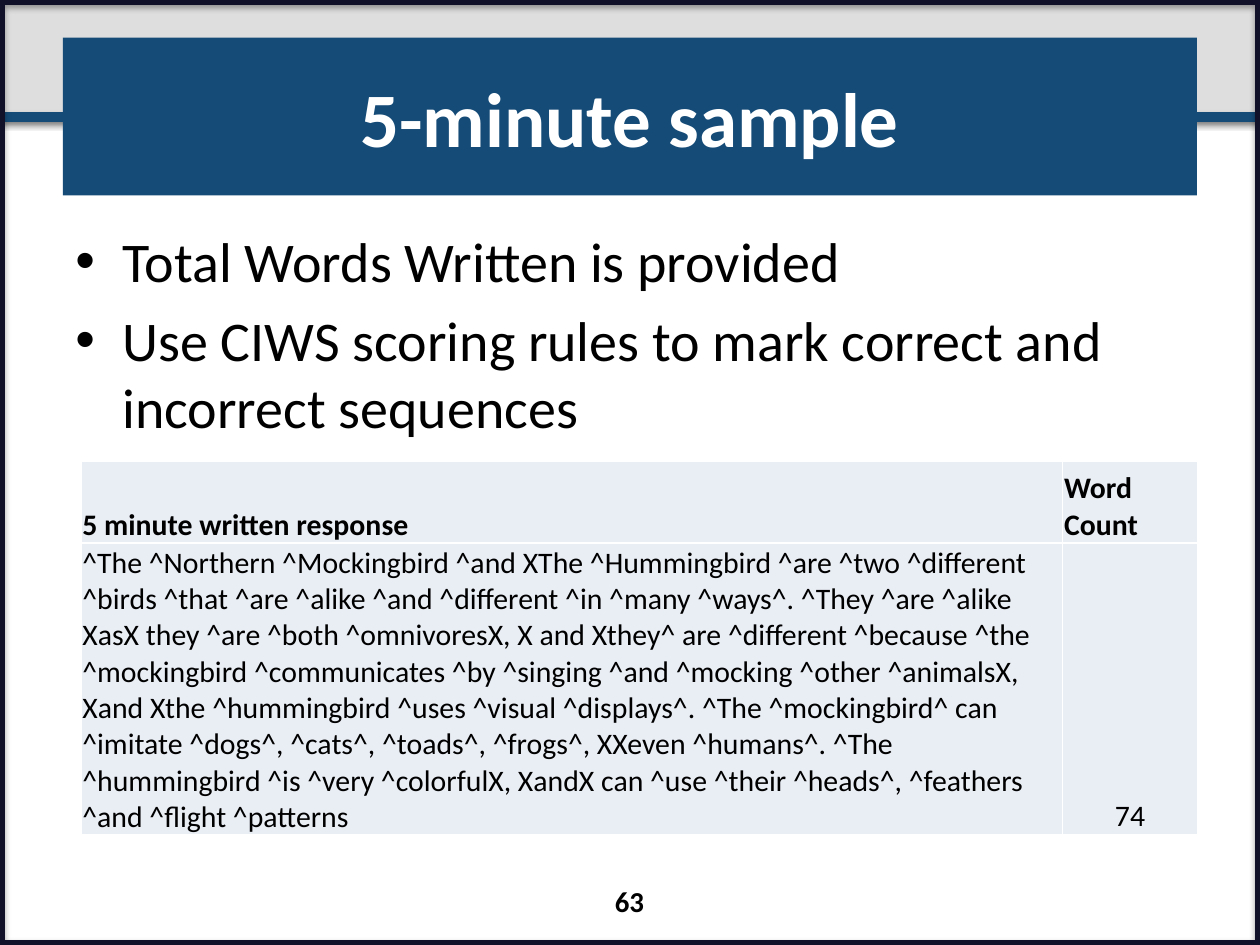
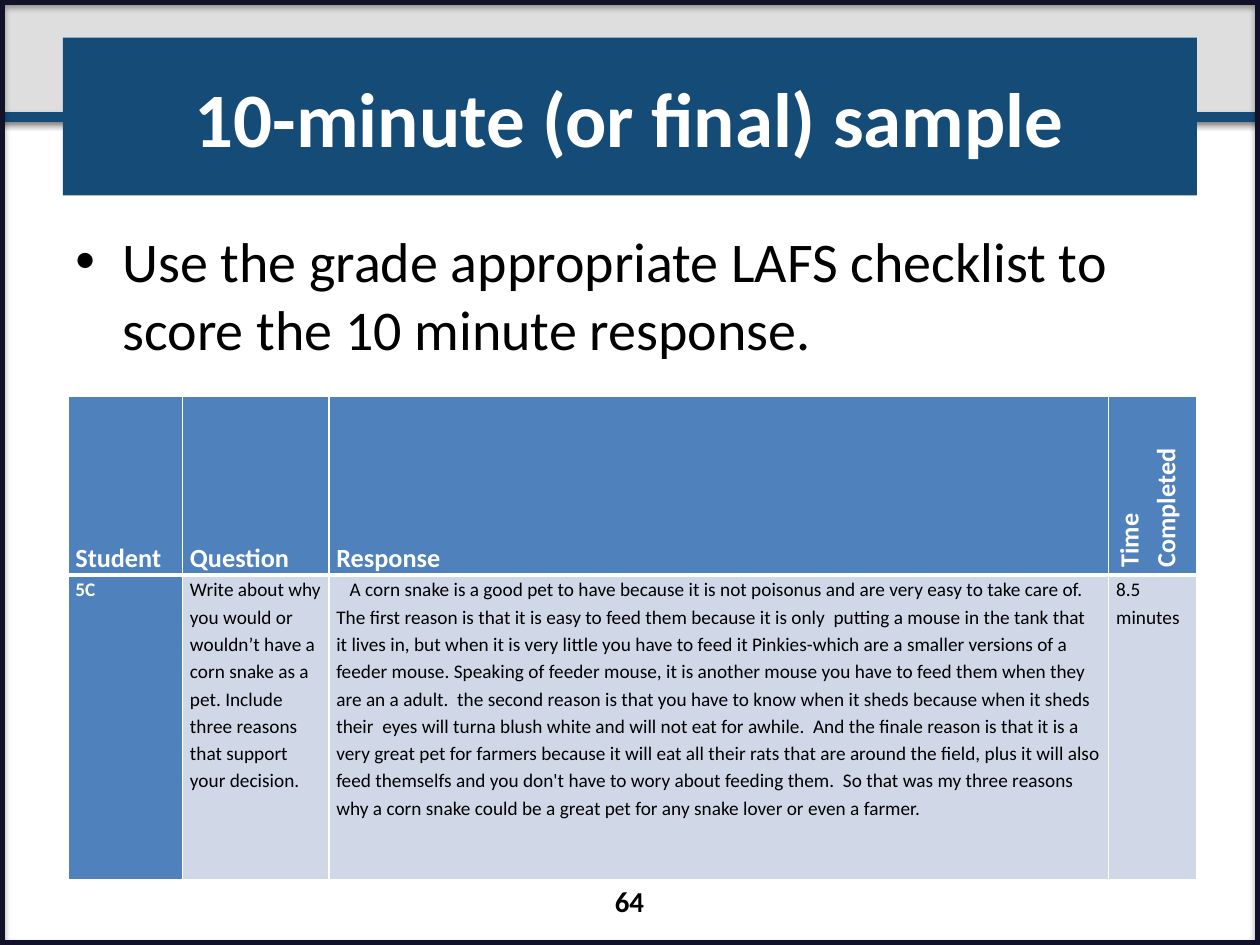
from lxml import etree
from pptx import Presentation
from pptx.dml.color import RGBColor
from pptx.enum.shapes import MSO_CONNECTOR as Link, MSO_SHAPE as Shape
from pptx.enum.text import MSO_ANCHOR as Anchor, PP_ALIGN as Align
from pptx.oxml import parse_xml
from pptx.oxml.ns import nsdecls, qn
from pptx.util import Cm, Pt

# Shared look
WIDE, HIGH = 25.4, 19.05
EDGE, SPAN = 1.27, 22.86
BAND = 2.36
NAVY, GREY, DARK = "154B77", "DDDEDD", "12112A"
WHITE, BLACK = "FFFFFF", "000000"
BLUE, PALE, MIST = "4F81BD", "D0D8E8", "E9EDF4"

TITLE = dict(size=Pt(44), bold=True)
BODY = dict(size=Pt(32), bold=False)
NUMBER = dict(size=Pt(16.5), bold=True)
HEAD_A = dict(size=Pt(17), bold=True)
CELL_A = dict(size=Pt(17), bold=False)
HEAD_B = dict(size=Pt(15), bold=True)
KEY_B = dict(size=Pt(11), bold=True)
CELL_B = dict(size=Pt(11), bold=False)

# Slide wording
SAMPLE = (
    "^The ^Northern ^Mockingbird ^and XThe ^Hummingbird ^are ^two ^different "
    "^birds ^that ^are ^alike ^and ^different ^in ^many ^ways^. ^They ^are ^alike "
    "XasX they ^are ^both ^omnivoresX, X and Xthey^ are ^different ^because ^the "
    "^mockingbird ^communicates ^by ^singing ^and ^mocking ^other ^animalsX, "
    "Xand Xthe ^hummingbird ^uses ^visual ^displays^. ^The ^mockingbird^ can "
    "^imitate ^dogs^, ^cats^, ^toads^, ^frogs^, XXeven ^humans^. ^The "
    "^hummingbird ^is ^very ^colorfulX, XandX can ^use ^their ^heads^, ^feathers "
    "^and ^flight ^patterns")
PROMPT = ("Write about why you would or wouldn’t have a corn snake as a pet. "
          "Include three reasons that support your decision.")
ESSAY = " ".join((
    "A corn snake is a good pet to have because it is not poisonus and are very",
    "easy to take care of. The first reason is that it is easy to feed them because",
    "it is only  putting a mouse in the tank that it lives in, but when it is very",
    "little you have to feed it Pinkies-which are a smaller versions of a feeder",
    "mouse. Speaking of feeder mouse, it is another mouse you have to feed them when",
    "they are an a adult.  the second reason is that you have to know when it sheds",
    "because when it sheds their  eyes will turna blush white and will not eat for",
    "awhile.  And the finale reason is that it is a very great pet for farmers",
    "because it will eat all their rats that are around the field, plus it will also",
    "feed themselfs and you don't have to wory about feeding them.  So that was my",
    "three reasons why a corn snake could be a great pet for any snake lover or even",
    "a farmer."))


# Small helpers
def put(obj, **vals):
    for key, val in vals.items():
        setattr(obj, key, val)


def paint(fmt, hue):
    """Give a fill or a font colour from a hex string."""
    if hasattr(fmt, "solid"):
        fmt.solid()
        fmt = fmt.fore_color
    fmt.rgb = RGBColor.from_string(hue)


def write(para, text, look, hue=BLACK, **vals):
    run = para.add_run()
    run.text = text
    put(run.font, name="Calibri", **look)
    paint(run.font.color, hue)
    put(para, **vals)


def shade(shape, alpha=35, dist=1.8):
    """Soft shadow straight below the shape."""
    shape._element.spPr.append(parse_xml(
        f'<a:effectLst {nsdecls("a")}><a:outerShdw blurRad="{Pt(3.1)}" '
        f'dist="{Pt(dist)}" dir="5400000" rotWithShape="0"><a:srgbClr val="{BLACK}">'
        f'<a:alpha val="{alpha * 1000}"/></a:srgbClr></a:outerShdw></a:effectLst>'))


def block(slide, left, top, width, height, hue=None):
    box = slide.shapes.add_shape(Shape.RECTANGLE, *map(Cm, (left, top, width, height)))
    if hue:
        paint(box.fill, hue)
    else:
        box.fill.background()
    box.line.fill.background()
    return box


def label(slide, left, top, width, height, anchor):
    box = slide.shapes.add_textbox(*map(Cm, (left, top, width, height)))
    put(box.text_frame, word_wrap=True, vertical_anchor=anchor)
    return box.text_frame


# Parts of every slide
def frame(slide):
    shade(block(slide, 0, 0, WIDE, BAND, GREY))
    rule = slide.shapes.add_connector(
        Link.STRAIGHT, *map(Cm, (WIDE, BAND, 0, BAND)))
    rim = block(slide, 0, 0, WIDE, HIGH)
    for part, hue in ((rule, NAVY), (rim, DARK)):
        paint(part.line.fill, hue)
        part.line.width = Pt(6)
    shade(rule, 38, 1.6)
    shade(rim)


def title(slide, text):
    box = block(slide, EDGE, 0.76, SPAN, 3.18, NAVY)
    box.shadow.inherit = False
    put(box.text_frame, word_wrap=True, vertical_anchor=Anchor.MIDDLE)
    write(box.text_frame.paragraphs[0], text, TITLE, WHITE, alignment=Align.CENTER)


def points(slide, height, items):
    body = label(slide, EDGE, 4.45, SPAN, height, Anchor.TOP)
    for i, item in enumerate(items):
        para = body.add_paragraph() if i else body.paragraphs[0]
        write(para, item, BODY, space_before=Pt(6.4))
        props = para._p.get_or_add_pPr()
        props.set("marL", str(Cm(0.95)))
        props.set("indent", str(-Cm(0.95)))
        etree.SubElement(props, qn("a:buFont")).set("typeface", "Arial")
        etree.SubElement(props, qn("a:buChar")).set("char", "•")


def number(slide, text):
    foot = label(slide, 9.73, 17.65, 5.92, 1.02, Anchor.MIDDLE)
    write(foot.paragraphs[0], text, NUMBER, alignment=Align.CENTER)


# Tables
def border(cell, **sides):
    """White cell edges; sides gives widths other than one point."""
    props = cell._tc.get_or_add_tcPr()
    for i, side in enumerate("LRTB"):
        props.insert(i, parse_xml(
            f'<a:ln{side} {nsdecls("a")} w="{Pt(sides.get(side, 1))}"><a:solidFill>'
            f'<a:srgbClr val="{WHITE}"/></a:solidFill></a:ln{side}>'))


def grid(slide, left, top, cols, rows):
    size = left, top, sum(cols), sum(rows)
    table = slide.shapes.add_table(len(rows), len(cols), *map(Cm, size)).table
    for col, width in zip(table.columns, cols):
        col.width = Cm(width)
    for row, height in zip(table.rows, rows):
        row.height = Cm(height)
    return table


def fill(cell, text, look, back, hue, pads, anchor, **vals):
    sides = ("margin_left", "margin_top", "margin_right", "margin_bottom")
    put(cell, vertical_anchor=anchor, **dict(zip(sides, map(Cm, pads))))
    paint(cell.fill, back)
    write(cell.text_frame.paragraphs[0], text, look, hue, **vals)


def counts(slide):
    table = grid(slide, 1.63, 9.3, (19.79, 2.72), (1.65, 5.87))
    texts = (("5 minute written response", "Word Count"), (SAMPLE, "74"))
    for r, line in enumerate(texts):
        for c, text in enumerate(line):
            cell = table.cell(r, c)
            fill(cell, text, CELL_A if r else HEAD_A, MIST, BLACK,
                 (0.03, 0.03, 0.03, 0), Anchor.BOTTOM,
                 alignment=Align.CENTER if r and c else Align.LEFT)
            border(cell)


def answers(slide):
    table = grid(slide, 1.37, 7.98, (2.31, 2.95, 15.72, 1.78), (3.58, 6.15))
    texts = (("Student", "Question", "Response", "Time Completed"),
             ("5C", PROMPT, ESSAY, "8.5 minutes"))
    for r, line in enumerate(texts):
        for c, text in enumerate(line):
            cell = table.cell(r, c)
            look = (CELL_B if c else KEY_B) if r else HEAD_B
            back, hue = (PALE, BLACK) if r and c else (BLUE, WHITE)
            fill(cell, text, look, back, hue, (0.15, 0, 0.15, 0),
                 Anchor.TOP if r else Anchor.BOTTOM, line_spacing=1.15)
            border(cell, **{"T" if r else "B": 3})
    # Upright last heading, indented first line of the essay
    table.cell(0, 3)._tc.get_or_add_tcPr().set("vert", "vert270")
    essay = table.cell(1, 2).text_frame.paragraphs[0]
    essay._p.get_or_add_pPr().set("indent", str(Cm(0.27)))


def main():
    deck = Presentation()
    put(deck, slide_width=Cm(WIDE), slide_height=Cm(HIGH))
    pages = (
        ("5-minute sample", 4.8,
         ("Total Words Written is provided",
          "Use CIWS scoring rules to mark correct and incorrect sequences"),
         counts, "63"),
        ("10-minute (or final) sample", 3.66,
         ("Use the grade appropriate LAFS checklist to score the 10 minute response.",),
         answers, "64"),
    )
    for head, height, items, draw, num in pages:
        slide = deck.slides.add_slide(deck.slide_layouts[6])
        frame(slide)
        title(slide, head)
        points(slide, height, items)
        draw(slide)
        number(slide, num)
    deck.save("out.pptx")


if __name__ == "__main__":
    main()
